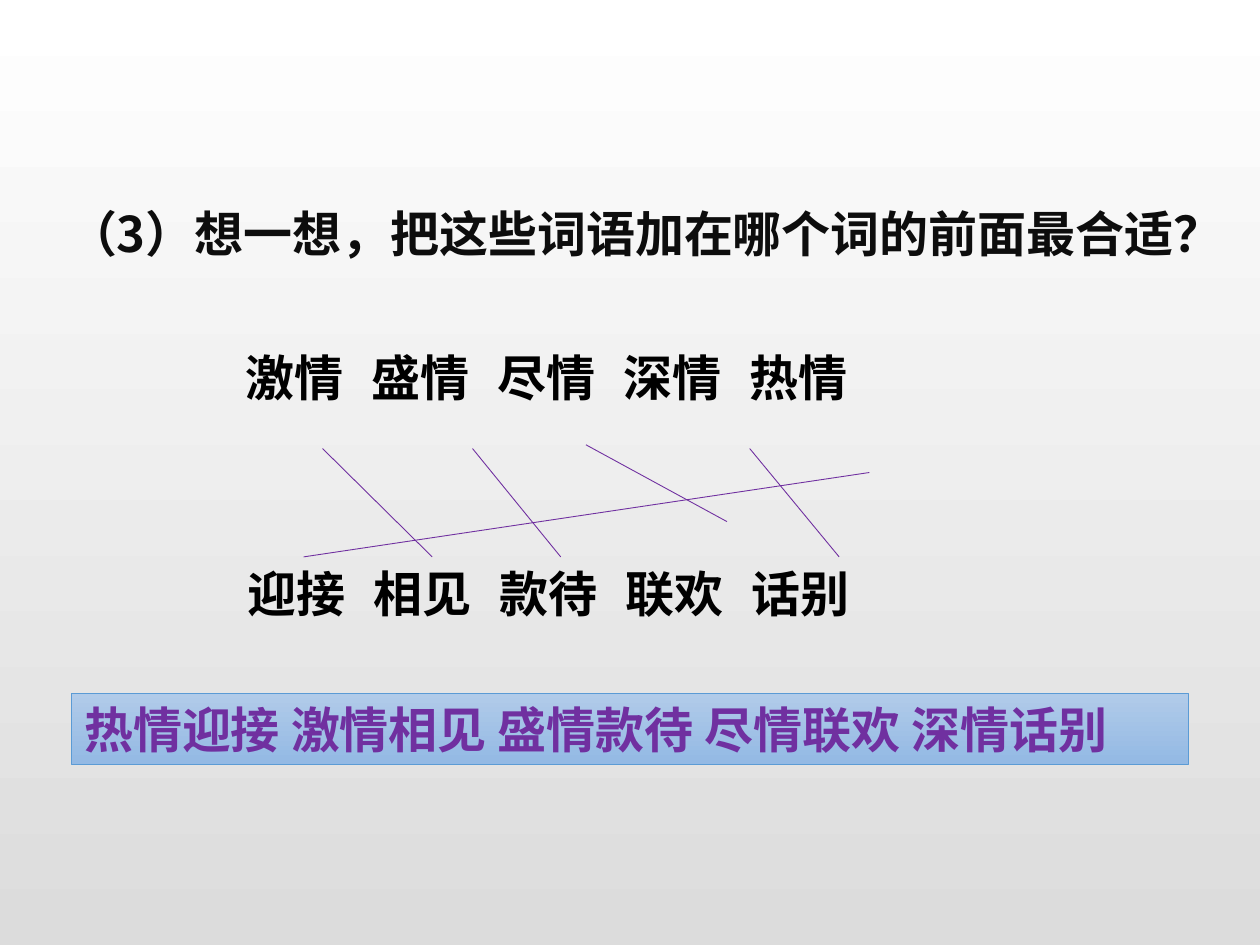
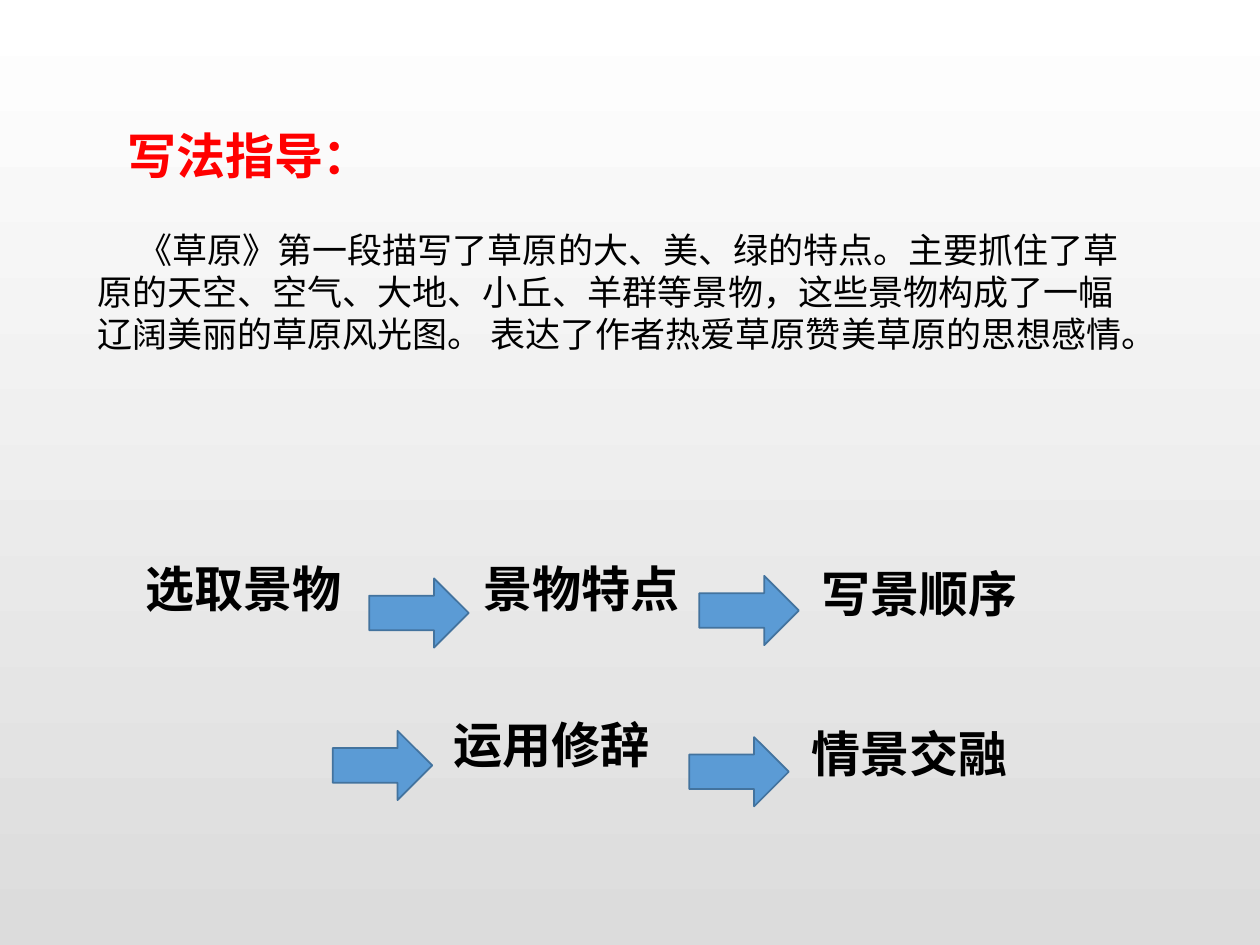
from lxml.etree import SubElement as Sub
from pptx import Presentation
from pptx.dml.color import RGBColor as Rgb
from pptx.enum.shapes import MSO_CONNECTOR as Conn, MSO_SHAPE as Form
from pptx.enum.text import MSO_ANCHOR as Anchor, MSO_AUTO_SIZE as Fit, PP_ALIGN as Align
from pptx.oxml.ns import qn
from pptx.util import Emu, Inches, Pt

FONT = "Noto Sans CJK SC"
COLS, ROWS = 100, 75
HUES = {
    "top": "FFFFFF", "base": "DCDCDC", "ink": "000000", "soft": "0D0D0D",
    "red": "FF0000", "plum": "7030A0", "blue": "5B9BD5", "edge": "43739E",
    "pale": "B1CBE9", "deep": "93B9E4",
}


class Deck:
    """Holds the style and the current slide; lengths are grid columns and rows."""

    def __init__(self):
        self.prs = Presentation()
        self.prs.slide_width, self.prs.slide_height = Inches(10), Inches(7.5)
        self.col = self.prs.slide_width / COLS
        self.row = self.prs.slide_height / ROWS
        self.fade(self.prs.slide_master.background.fill, "top", "base")

    def hue(self, name):
        return Rgb.from_string(HUES[name])

    def fade(self, fill, start, end):
        fill.gradient()
        fill.gradient_angle = 270
        for stop, name in zip(fill.gradient_stops, (start, end)):
            stop.color.rgb = self.hue(name)

    def area(self, x, y, w, h):
        return [Emu(round(n)) for n in
                (x * self.col, y * self.row, w * self.col, h * self.row)]

    def page(self, layout):
        self.slide = self.prs.slides.add_slide(self.prs.slide_layouts[layout])

    def style(self, shape, text, hue="ink", size=28, bold=True, face=FONT,
              space=1, indent=0, tabs=()):
        frame = shape.text_frame
        frame.text = text
        frame.word_wrap = True
        frame.auto_size = Fit.NONE
        frame.vertical_anchor = Anchor.TOP
        para = frame.paragraphs[0]
        para.alignment = Align.LEFT
        para.line_spacing = space
        para.space_before = Pt(0)
        props = para._p.get_or_add_pPr()
        props.set("marL", "0")
        props.set("indent", str(round(indent * self.col)))
        Sub(props, qn("a:buNone"))
        if tabs:
            stops = Sub(props, qn("a:tabLst"))
            for tab in tabs:
                Sub(stops, qn("a:tab"), pos=str(round(tab * self.col)), algn="l")
        for run in para.runs:
            run.font.size, run.font.bold, run.font.name = Pt(size), bold, face
            run.font.color.rgb = self.hue(hue)
            Sub(run._r.get_or_add_rPr(), qn("a:ea"), typeface=FONT)

    def hold(self, slot, box, text, **look):
        shape = self.slide.placeholders[slot]
        shape.left, shape.top, shape.width, shape.height = self.area(*box)
        self.style(shape, text, **look)

    def title(self, box, text, hue):
        self.hold(0, box, text, hue=hue, space=1.5)

    def body(self, box, text, **look):
        self.hold(1, box, text, **look)

    def label(self, box, text, **look):
        self.style(self.slide.shapes.add_textbox(*self.area(*box)), text, **look)

    def shape(self, form, box, edge, width):
        shape = self.slide.shapes.add_shape(form, *self.area(*box))
        shape.shadow.inherit = False
        shape.line.color.rgb = self.hue(edge)
        shape.line.width = Pt(width)
        return shape

    def bar(self, box, text):
        bar = self.shape(Form.RECTANGLE, box, "blue", 0.5)
        self.fade(bar.fill, "pale", "deep")
        self.style(bar, text, hue="plum")

    def arrow(self, x, y):
        arrow = self.shape(Form.RIGHT_ARROW, (x, y, 7.9, 5.5), "edge", 1)
        arrow.fill.solid()
        arrow.fill.fore_color.rgb = self.hue("blue")

    def line(self, *ends):
        line = self.slide.shapes.add_connector(Conn.STRAIGHT, *self.area(*ends))
        line.line.color.rgb = self.hue("plum")
        line.line.width = Pt(0.5)
        Sub(line._element.spPr, qn("a:effectLst"))


def match(deck):
    deck.page(5)
    deck.title((4.4, 13.3, 91.3, 14), "（3）想一想，把这些词语加在哪个词的前面最合适？", "soft")

    # Two rows of words on equal tab stops
    tabs = [9.52 * n for n in range(1, 5)]
    for x, y, words in ((18.5, 27.1, "激情 盛情 尽情 深情 热情"),
                        (18.7, 44.2, "迎接 相见 款待 联欢 话别")):
        deck.label((x, y, 74.7, 5.7), "\t".join(words.split()), tabs=tabs)

    # Lines that pair the words, each from start point to end point
    for ends in ((25.6, 35.6, 34.3, 44.2), (37.5, 35.6, 44.5, 44.2),
                 (57.7, 41.4, 46.5, 35.3), (59.5, 35.6, 66.6, 44.2),
                 (24.1, 44.2, 69, 37.5)):
        deck.line(*ends)

    # Answer
    deck.bar((5.7, 55, 88.6, 5.7), "热情迎接 激情相见 盛情款待 尽情联欢 深情话别")


def guide(deck):
    deck.page(1)
    deck.title((9.1, 7.1, 22, 7), "写法指导：", "red")
    deck.body((6.7, 17.6, 85, 14.5),
              "《草原》第一段描写了草原的大、美、绿的特点。主要抓住了草原的天空、空气、"
              "大地、小丘、羊群等景物，这些景物构成了一幅辽阔美丽的草原风光图。 "
              "表达了作者热爱草原赞美草原的思想感情。",
              size=20, bold=False, face="Arial", indent=3.2)

    # Steps of writing, joined by block arrows
    for text, x, y in (("选取景物", 10.6, 43.8), ("景物特点", 37.4, 43.8),
                       ("写景顺序", 64.2, 44.2), ("运用修辞", 35, 56.2),
                       ("情景交融", 63.4, 56.9)):
        deck.label((x, y, 18.1, 5.7), text)
    for spot in ((29.3, 45.9), (55.5, 45.7), (26.4, 58), (54.7, 58.5)):
        deck.arrow(*spot)


def main():
    deck = Deck()
    match(deck)
    guide(deck)
    deck.prs.save("out.pptx")


if __name__ == "__main__":
    main()
